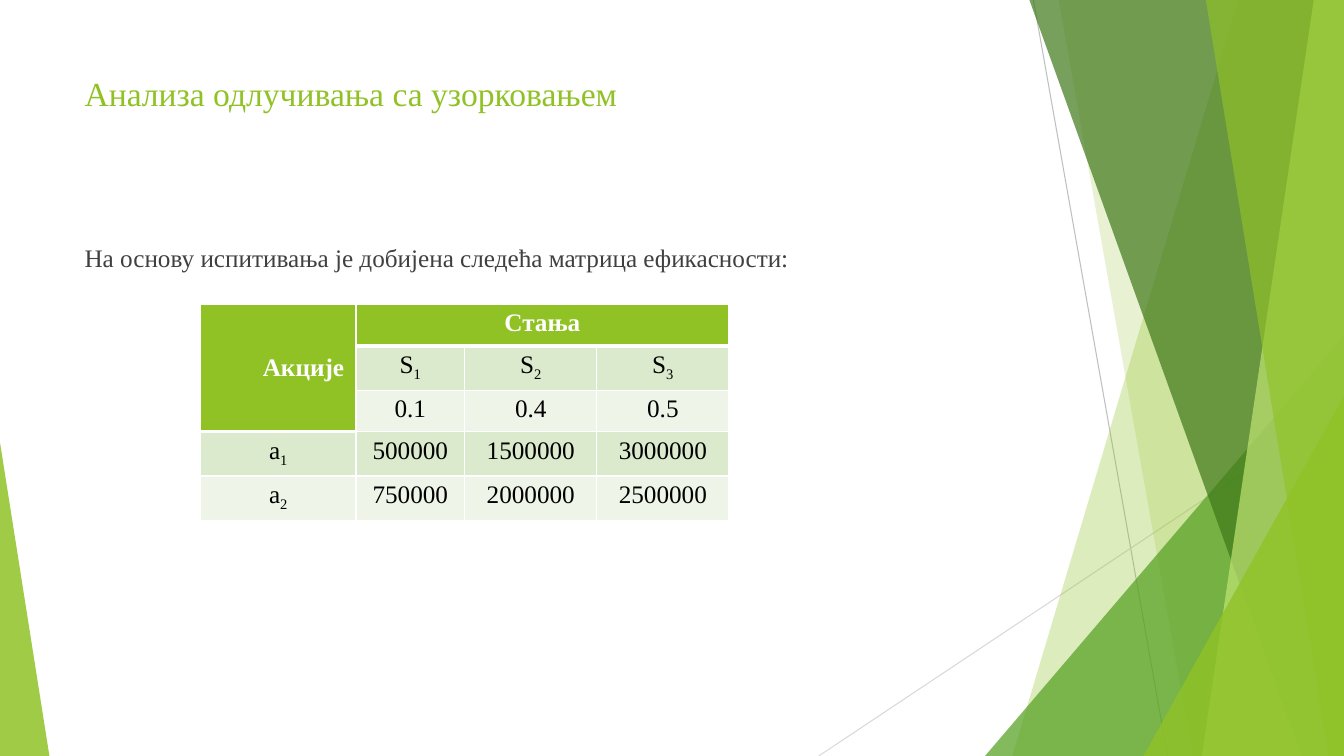
"""Build the slide on decision analysis with sampling."""
from lxml.etree import SubElement
from pptx import Presentation
from pptx.dml.color import RGBColor
from pptx.enum.shapes import MSO_CONNECTOR as Link, MSO_SHAPE as Preset
from pptx.enum.text import MSO_ANCHOR as Anchor, PP_ALIGN as Align
from pptx.oxml.ns import qn
from pptx.util import Inches, Pt

WIDTH, HEIGHT = 13.33, 7.5
THEME = dict(font="Times New Roman", title_size=24, body_size=18,
             green="90C226", leaf="54A021", forest="3F7819", lime="C0E474",
             body="404040", ink="000000", white="FFFFFF",
             band_dark="DBE9CD", band_light="EEF4E8",
             grey="BFBFBF", pale_grey="D9D9D9")

TITLE = "Анализа одлучивања са узорковањем"
INTRO = "На основу испитивања је добијена следећа матрица ефикасности:"
MATRIX = [
    ["Акције", "Стања", "", ""],
    ["", "S_1", "S_2", "S_3"],
    ["", "0.1", "0.4", "0.5"],
    ["а_1", "500000", "1500000", "3000000"],
    ["а_2", "750000", "2000000", "2500000"],
]
COLUMN_WIDTHS = [1.54, 1.08, 1.31, 1.31]
ROW_HEIGHT = 0.41
MATRIX_LEFT, MATRIX_TOP = 1.99, 3.02
THIN, THICK = 1, 3
HEADERS = {(0, 0), (1, 0), (2, 0), (0, 1), (0, 2), (0, 3)}
THICK_BELOW = {(2, 0), (0, 0), (0, 1), (0, 2), (0, 3)}

RAYS = [((10.25, 0), (11.58, HEIGHT), "grey"),
        ((WIDTH, 4.03), (8.12, HEIGHT), "pale_grey")]
BANDS_BEHIND = [(12.28, 10.04, "green", 30), (10.5, 11.83, "green", 20)]
BANDS_FRONT = [(10.21, 12.91, "forest", 70), (13.03, 11.92, "lime", 70),
               (11.96, 13.18, "green", 65)]
RIGHT_PEAK_BACK = (9.77, 3.33, 3.56, 1, "leaf", 72)
RIGHT_PEAK_FRONT = (11.34, 3.93, 1.99, 1, "green", 80)
LEFT_PEAK = (0, 4.39, 0.49, 0, "green", 85)


def color(name):
    return RGBColor.from_string(THEME[name])


def paint(facet, name, opacity):
    facet.shadow.inherit = False
    facet.fill.solid()
    facet.fill.fore_color.rgb = color(name)
    facet.line.fill.background()
    tint = facet._element.spPr.find(f".//{qn('a:srgbClr')}")
    SubElement(tint, qn("a:alpha"), val=str(opacity * 1000))


def add_ray(slide, start, end, name):
    ray = slide.shapes.add_connector(Link.STRAIGHT, *map(Inches, start + end))
    ray.line.color.rgb = color(name)
    ray.line.width = Pt(0.75)
    SubElement(ray._element.spPr, qn("a:effectLst"))


def add_band(slide, top_x, bottom_x, name, opacity):
    corners = [(Inches(x), Inches(y)) for x, y in
               [(top_x, 0), (WIDTH, 0), (WIDTH, HEIGHT), (bottom_x, HEIGHT)]]
    outline = slide.shapes.build_freeform(*corners[0])
    outline.add_line_segments(corners[1:], close=True)
    paint(outline.convert_to_shape(), name, opacity)


def add_peak(slide, left, top, width, apex, name, opacity):
    peak = slide.shapes.add_shape(Preset.ISOSCELES_TRIANGLE,
                                  *map(Inches, (left, top, width, HEIGHT - top)))
    peak.adjustments[0] = apex
    paint(peak, name, opacity)


def add_words(paragraph, words, size, name, bold=False):
    base, _, index = words.partition("_")
    for part in filter(None, (base, index)):
        run = paragraph.add_run()
        run.text = part
        style = dict(name=THEME["font"], size=Pt(THEME[size]), bold=bold)
        for key, value in style.items():
            setattr(run.font, key, value)
        run.font.color.rgb = color(name)
        if part is index:
            run.font._element.set("baseline", "-25000")


def add_text(slide, area, words, size, name):
    frame = slide.shapes.add_textbox(*map(Inches, area)).text_frame
    frame.word_wrap = True
    add_words(frame.paragraphs[0], words, size, name)


def add_borders(cell, row, column):
    weights = dict(L=THIN, R=THIN,
                   T=THICK if (row - 1, column) in THICK_BELOW - {(0, 0)} else THIN,
                   B=THICK if (row, column) in THICK_BELOW else THIN)
    properties = cell._tc.get_or_add_tcPr()
    for side, weight in weights.items():
        edge = SubElement(properties, qn(f"a:ln{side}"), w=str(Pt(weight)))
        ink = SubElement(edge, qn("a:solidFill"))
        SubElement(ink, qn("a:srgbClr"), val=THEME["white"])


def add_matrix(slide):
    area = (MATRIX_LEFT, MATRIX_TOP, sum(COLUMN_WIDTHS), ROW_HEIGHT * len(MATRIX))
    matrix = slide.shapes.add_table(len(MATRIX), len(COLUMN_WIDTHS),
                                    *map(Inches, area)).table
    for column, width in zip(matrix.columns, COLUMN_WIDTHS):
        column.width = Inches(width)
    for row in matrix.rows:
        row.height = Inches(ROW_HEIGHT)
    for r, entries in enumerate(MATRIX):
        for c, words in enumerate(entries):
            cell = matrix.cell(r, c)
            header = (r, c) in HEADERS
            add_borders(cell, r, c)
            cell.fill.solid()
            band = "band_dark" if r % 2 else "band_light"
            cell.fill.fore_color.rgb = color("green" if header else band)
            paragraph = cell.text_frame.paragraphs[0]
            paragraph.alignment = Align.CENTER
            add_words(paragraph, words, "body_size",
                      "white" if header else "ink", header)
    actions = matrix.cell(0, 0)
    actions.merge(matrix.cell(2, 0))
    actions.vertical_anchor = Anchor.MIDDLE
    actions.margin_left = Inches(0.6)
    matrix.cell(0, 1).merge(matrix.cell(0, 3))


def main():
    deck = Presentation()
    deck.slide_width, deck.slide_height = Inches(WIDTH), Inches(HEIGHT)
    slide = deck.slides.add_slide(deck.slide_layouts[6])
    for ray in RAYS:
        add_ray(slide, *ray)
    for band in BANDS_BEHIND:
        add_band(slide, *band)
    add_peak(slide, *RIGHT_PEAK_BACK)
    for band in BANDS_FRONT:
        add_band(slide, *band)
    for peak in (RIGHT_PEAK_FRONT, LEFT_PEAK):
        add_peak(slide, *peak)
    add_text(slide, (0.74, 0.67, 9.4, 1.44), TITLE, "title_size", "green")
    add_text(slide, (0.74, 2.36, 9.4, 4.24), INTRO, "body_size", "body")
    add_matrix(slide)
    deck.save("out.pptx")


if __name__ == "__main__":
    main()
